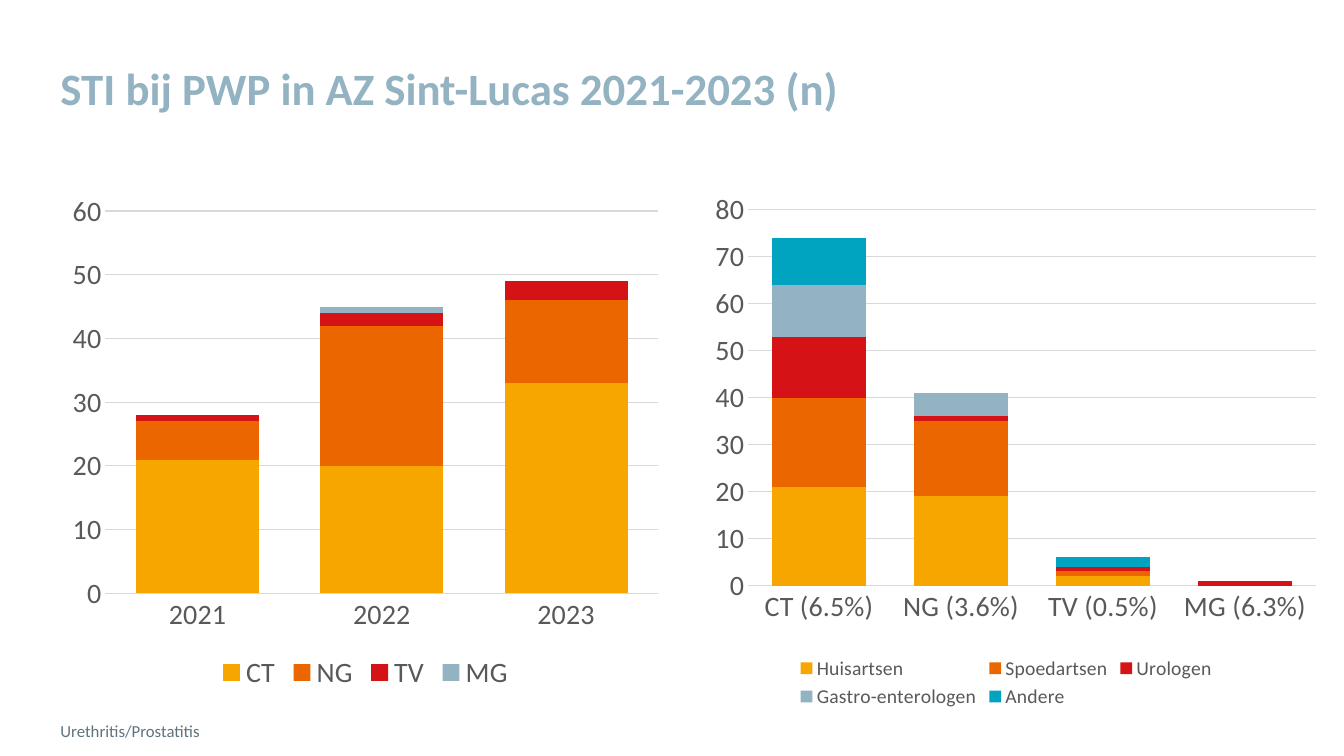
import pptx
import pptx.chart.data
import pptx.dml.color
import pptx.enum.chart
import pptx.enum.text
import pptx.oxml
import pptx.oxml.ns
import pptx.util

Inches = pptx.util.Inches
Pt = pptx.util.Pt
RGBColor = pptx.dml.color.RGBColor

FONT = "Calibri"
YELLOW = RGBColor(0xF7, 0xA6, 0x00)
ORANGE = RGBColor(0xEC, 0x66, 0x00)
RED = RGBColor(0xD5, 0x13, 0x17)
BLUE_GREY = RGBColor(0x93, 0xB2, 0xC2)
TEAL = RGBColor(0x00, 0xA3, 0xC0)
SLATE = RGBColor(0x5F, 0x73, 0x7D)
GREY = RGBColor(0x59, 0x59, 0x59)
GRID = RGBColor(0xD9, 0xD9, 0xD9)
SERIES_COLORS = [YELLOW, ORANGE, RED, BLUE_GREY, TEAL]


def set_text(sp, text, size, color, anchor, bold=False):
    tf = sp.text_frame
    tf.word_wrap = True
    tf.vertical_anchor = anchor
    tf.margin_left = tf.margin_right = tf.margin_top = tf.margin_bottom = 0
    p = tf.paragraphs[0]
    p.alignment = pptx.enum.text.PP_ALIGN.LEFT
    r = p.add_run()
    r.text = text
    r.font.name = FONT
    r.font.size = Pt(size)
    r.font.bold = bold
    r.font.color.rgb = color


def set_font(font, size):
    font.name = FONT
    font.size = Pt(size)
    font.color.rgb = GREY


prs = pptx.Presentation()
prs.slide_width = Inches(13.33)
prs.slide_height = Inches(7.5)
slide = prs.slides.add_slide(prs.slide_layouts[5])

# Title
title = slide.shapes.title
title.left, title.top = Inches(0.6), Inches(0.6)
title.width, title.height = Inches(12.13), Inches(1.1)
set_text(title, "STI bij PWP in AZ Sint-Lucas 2021-2023 (n)", 32, BLUE_GREY,
         pptx.enum.text.MSO_ANCHOR.TOP, bold=True)

# Footnote
note = slide.shapes.add_textbox(Inches(0.6), Inches(6.95), Inches(8.85), Inches(0.4))
set_text(note, "Urethritis/Prostatitis", 12, SLATE, pptx.enum.text.MSO_ANCHOR.BOTTOM)

# Stacked charts: by year, and by requesting department
charts = [
    {
        "at": (0.6, 1.82, 6.05, 5.08),
        "categories": ["2021", "2022", "2023"],
        "series": {"CT": (21, 20, 33), "NG": (6, 22, 13), "TV": (1, 2, 3), "MG": (0, 1, 0)},
        "legend_size": 20,
        "plot_area": None,
    },
    {
        "at": (6.78, 1.82, 6.4, 5.25),
        "categories": ["CT (6.5%)", "NG (3.6%)", "TV (0.5%)", "MG (6.3%)"],
        "series": {
            "Huisartsen": (21, 19, 2, 0),
            "Spoedartsen": (19, 16, 1, 0),
            "Urologen": (13, 1, 1, 1),
            "Gastro-enterologen": (11, 5, 0, 0),
            "Andere": (10, 0, 2, 0),
        },
        "legend_size": 14,
        "plot_area": {"x": 0.1, "y": 0.05, "w": 0.88, "h": 0.71},
    },
]

for info in charts:
    data = pptx.chart.data.CategoryChartData()
    data.categories = info["categories"]
    for name, values in info["series"].items():
        data.add_series(name, values)
    chart = slide.shapes.add_chart(
        pptx.enum.chart.XL_CHART_TYPE.COLUMN_STACKED,
        *[Inches(v) for v in info["at"]], data).chart
    chart.has_title = False
    set_font(chart.font, 20)

    # Columns
    plot = chart.plots[0]
    plot.gap_width = 50
    plot.overlap = 100
    plot.vary_by_categories = False
    for series, color in zip(plot.series, SERIES_COLORS):
        series.format.fill.solid()
        series.format.fill.fore_color.rgb = color

    # Axes
    for axis in (chart.category_axis, chart.value_axis):
        axis.major_tick_mark = axis.minor_tick_mark = pptx.enum.chart.XL_TICK_MARK.NONE
        set_font(axis.tick_labels.font, 20)
    chart.value_axis.has_major_gridlines = True
    chart.value_axis.format.line.fill.background()
    for line in (chart.category_axis.format.line,
                 chart.value_axis.major_gridlines.format.line):
        line.color.rgb = GRID
        line.width = Pt(0.75)

    # Legend
    chart.has_legend = True
    chart.legend.position = pptx.enum.chart.XL_LEGEND_POSITION.BOTTOM
    chart.legend.include_in_layout = False
    set_font(chart.legend.font, info["legend_size"])

    # Fixed inner plot area
    if info["plot_area"]:
        qn = pptx.oxml.ns.qn
        area = chart.element.find(".//" + qn("c:plotArea"))
        for old in area.findall(qn("c:layout")):
            area.remove(old)
        modes = "".join(f'<c:{k}Mode val="edge"/>' for k in "xy")
        sizes = "".join(f'<c:{k} val="{v}"/>' for k, v in info["plot_area"].items())
        area.insert(0, pptx.oxml.parse_xml(
            f'<c:layout {pptx.oxml.ns.nsdecls("c")}><c:manualLayout>'
            f'<c:layoutTarget val="inner"/>{modes}{sizes}</c:manualLayout></c:layout>'))

prs.save("out.pptx")
